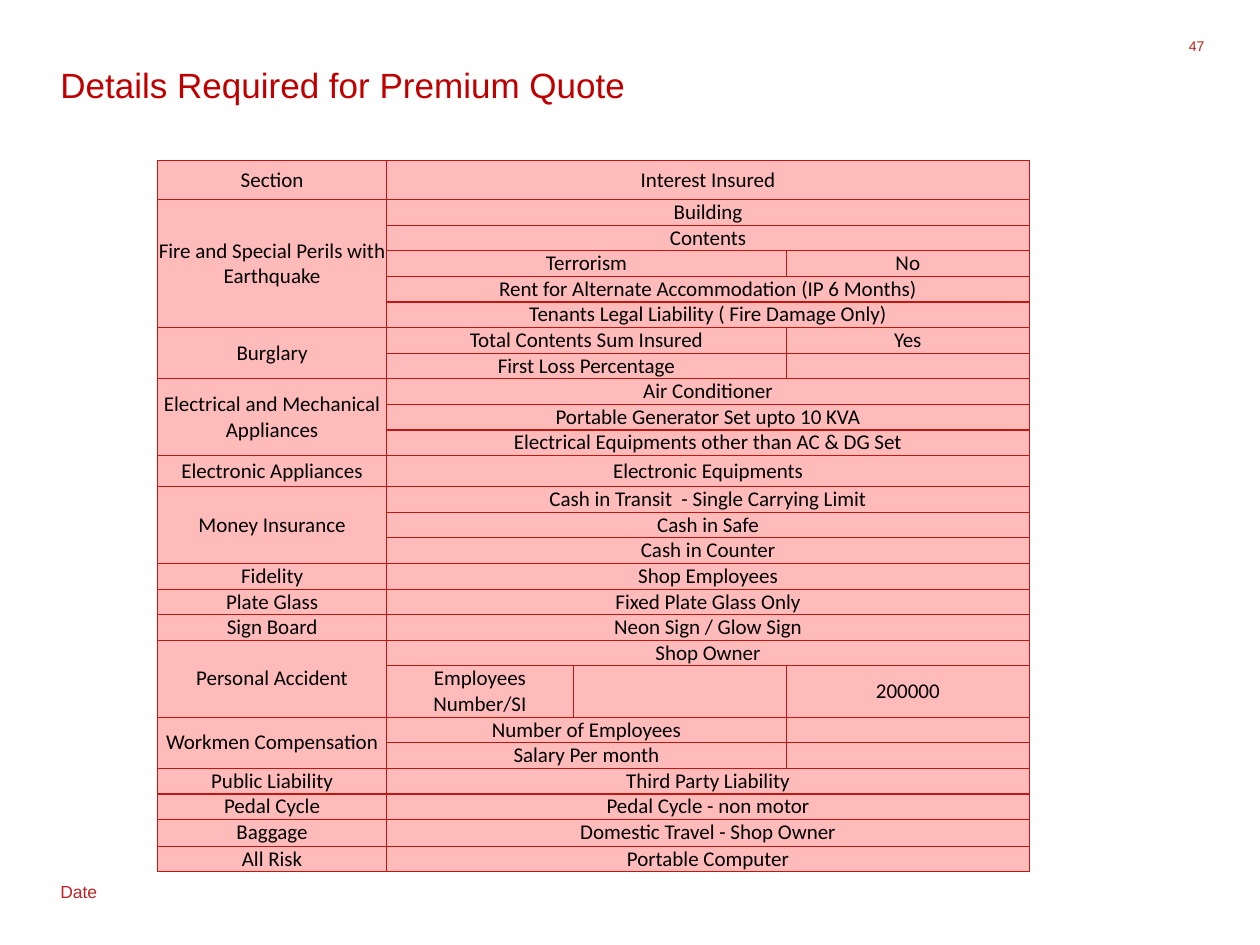
from lxml.etree import SubElement
from pptx import Presentation
from pptx.dml.color import RGBColor as RGB
from pptx.enum.text import MSO_ANCHOR as ANCHOR, PP_ALIGN as ALIGN
from pptx.oxml.ns import qn
from pptx.util import Pt

LINE, FILL, INK = "C21612", "FFBABA", "000000"
SIDES = ("a:lnL", "a:lnR", "a:lnT", "a:lnB")


def write(frame, text, size=12, font="Calibri", color=INK, align=ALIGN.LEFT,
          line=None, after=None):
    """Fill the first paragraph; an empty one still keeps its text size."""
    para = frame.paragraphs[0]
    para.alignment = align
    if line:
        para.line_spacing = line
    if after:
        para.space_after = after
    if not text:
        SubElement(para._p, qn("a:endParaRPr"), sz=str(size * 100))
        return
    run = para.add_run()
    run.text = text
    run.font.size, run.font.name = Pt(size), font
    run.font.color.rgb = RGB.from_string(color)


def style(cell):
    """Set insets, borders and fill of a table cell."""
    cell.margin_left = cell.margin_right = 0
    cell.margin_top = cell.margin_bottom = 0
    cell.vertical_anchor = ANCHOR.MIDDLE
    props = cell._tc.get_or_add_tcPr()
    for side in SIDES:
        edge = SubElement(props, qn(side), w=str(Pt(0.75)))
        solid = SubElement(edge, qn("a:solidFill"))
        SubElement(solid, qn("a:srgbClr"), val=LINE)
    cell.fill.solid()
    cell.fill.fore_color.rgb = RGB.from_string(FILL)


deck = Presentation()
deck.slide_width, deck.slide_height = Pt(720), Pt(540)
slide = deck.slides.add_slide(deck.slide_layouts[6])
shapes = slide.shapes

# Title, date and page number
title = shapes.add_textbox(Pt(27.4), Pt(34.6), Pt(660), Pt(41)).text_frame
title.word_wrap = True
write(title, "Details Required for Premium Quote", size=20, font="Arial",
      color="C00000", line=Pt(22))

date = shapes.add_textbox(Pt(27.4), Pt(498.2), Pt(36), Pt(20)).text_frame
date.word_wrap = False
write(date, "Date", size=10, font="Arial", color="BE2328", line=1.15,
      after=Pt(10))

page = shapes.add_textbox(Pt(672.5), Pt(21.6), Pt(15.8), Pt(14.4)).text_frame
page.word_wrap = True
page.margin_left = page.margin_right = page.margin_top = page.margin_bottom = 0
write(page, "47", size=8, font="Arial", color="C21B17", align=ALIGN.RIGHT)

# Each section has rows of one, two or three cells beside its name
sections = [
    ("Section", [["Interest Insured"]]),
    ("Fire and Special Perils with Earthquake", [
        ["Building"],
        ["Contents"],
        ["Terrorism", "No"],
        ["Rent for Alternate Accommodation (IP 6 Months)"],
        ["Tenants Legal Liability ( Fire Damage Only)"]]),
    ("Burglary", [
        ["Total Contents Sum Insured", "Yes"],
        ["First Loss Percentage", ""]]),
    ("Electrical and Mechanical Appliances", [
        ["Air Conditioner"],
        ["Portable Generator Set upto 10 KVA"],
        ["Electrical Equipments other than AC & DG Set"]]),
    ("Electronic Appliances", [["Electronic Equipments"]]),
    ("Money Insurance", [
        ["Cash in Transit  - Single Carrying Limit"],
        ["Cash in Safe"],
        ["Cash in Counter"]]),
    ("Fidelity", [["Shop Employees"]]),
    ("Plate Glass", [["Fixed Plate Glass Only"]]),
    ("Sign Board", [["Neon Sign / Glow Sign"]]),
    ("Personal Accident", [
        ["Shop Owner"],
        ["Employees Number/SI", "", "200000"]]),
    ("Workmen Compensation", [
        ["Number of Employees", ""],
        ["Salary Per month", ""]]),
    ("Public Liability", [["Third Party Liability"]]),
    ("Pedal Cycle", [["Pedal Cycle - non motor"]]),
    ("Baggage", [["Domestic Travel - Shop Owner"]]),
    ("All Risk", [["Portable Computer"]]),
]
starts = {1: [1], 2: [1, 3], 3: [1, 2, 3]}
widths = [131, 106.5, 121.8, 139]
tall = {"Section": 22.3, "Electronic Appliances": 17.8, "Baggage": 15.2,
        "Employees Number/SI": 29.3}
count = sum(len(rows) for _, rows in sections)

frame = shapes.add_table(count, 4, Pt(90), Pt(91.8), Pt(sum(widths)), Pt(406))
table = frame.table
table.first_row = table.horz_banding = False
for col, width in zip(table.columns, widths):
    col.width = Pt(width)

texts = {}
top = 0
for name, rows in sections:
    texts[top, 0] = name
    if len(rows) > 1:
        table.cell(top, 0).merge(table.cell(top + len(rows) - 1, 0))
    for row, items in enumerate(rows, top):
        high = tall.get(name, tall.get(items[0], 14.65))
        table.rows[row].height = Pt(high)
        cols = starts[len(items)]
        for text, col, end in zip(items, cols, cols[1:] + [4]):
            texts[row, col] = text
            if end - col > 1:
                table.cell(row, col).merge(table.cell(row, end - 1))
    top += len(rows)

for row in range(count):
    for col in range(4):
        cell = table.cell(row, col)
        style(cell)
        write(cell.text_frame, texts.get((row, col), ""), align=ALIGN.CENTER)

deck.save("out.pptx")
